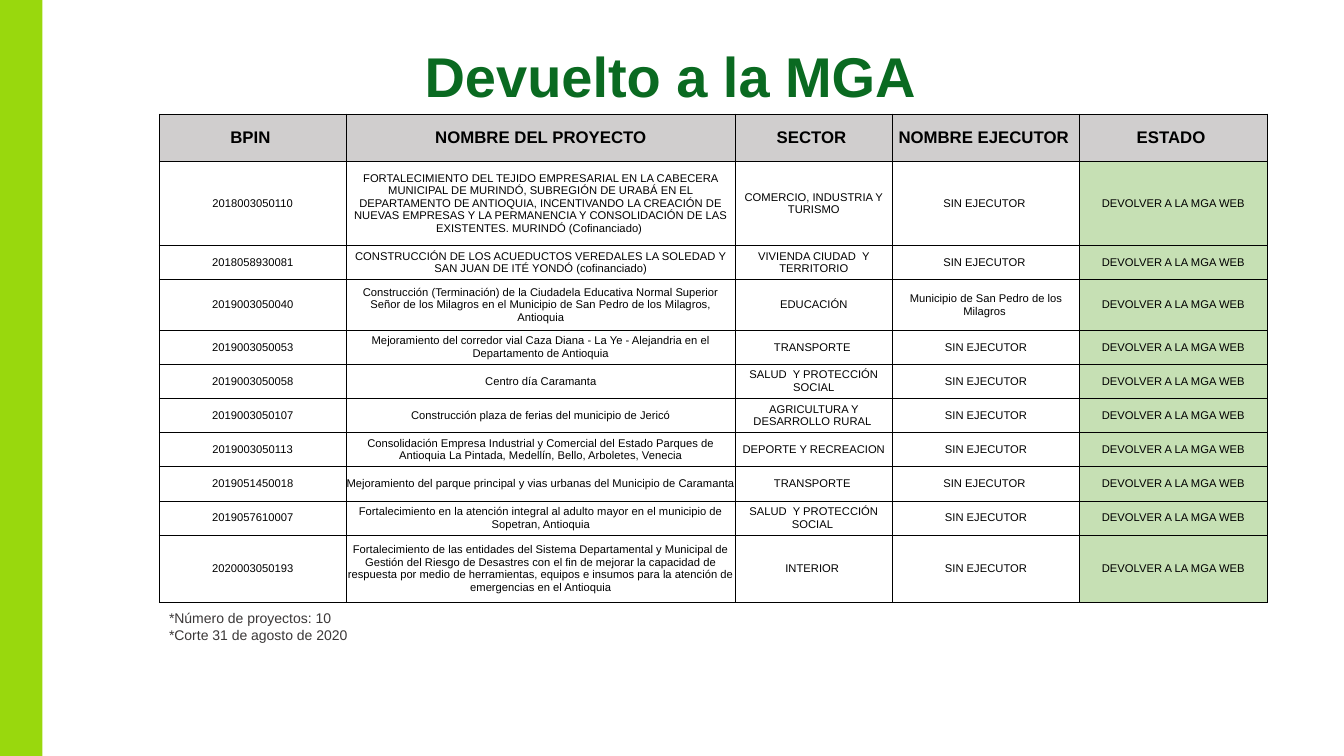
from lxml import etree
from pptx import Presentation
from pptx import util as u
from pptx.dml import color
from pptx.enum import shapes, text
from pptx.oxml import ns

GREEN = color.RGBColor(0x0A, 0x6A, 0x21)
LIME = color.RGBColor(0x99, 0xD8, 0x0D)
PALE_GREEN = color.RGBColor(0xC6, 0xE0, 0xB4)
GREY = color.RGBColor(0xD0, 0xCE, 0xCE)
DARK_GREY = color.RGBColor(0x3B, 0x38, 0x38)
BLACK = color.RGBColor(0, 0, 0)
WHITE = color.RGBColor(0xFF, 0xFF, 0xFF)

HEADINGS = ("BPIN ", "NOMBRE DEL PROYECTO", "SECTOR ", "NOMBRE EJECUTOR ", "ESTADO ")
STATE = "DEVOLVER A LA MGA WEB"
COLUMN_WIDTHS = (4.72, 9.8, 3.96, 4.72, 4.72)
HEADING_HEIGHT = 1.19
PROJECTS = (
    (2.13, "2018003050110",
     "FORTALECIMIENTO DEL TEJIDO EMPRESARIAL EN LA CABECERA MUNICIPAL DE MURINDÓ, "
     "SUBREGIÓN DE URABÁ EN EL DEPARTAMENTO DE ANTIOQUIA, INCENTIVANDO LA CREACIÓN DE "
     "NUEVAS EMPRESAS Y LA PERMANENCIA Y CONSOLIDACIÓN DE LAS EXISTENTES. "
     "MURINDÓ (Cofinanciado) ",
     "COMERCIO, INDUSTRIA Y TURISMO", "SIN EJECUTOR "),
    (0.86, "2018058930081",
     "CONSTRUCCIÓN DE LOS ACUEDUCTOS VEREDALES LA SOLEDAD Y SAN JUAN DE ITÉ YONDÓ "
     "(cofinanciado)",
     "VIVIENDA CIUDAD  Y TERRITORIO", "SIN EJECUTOR "),
    (1.27, "2019003050040",
     "Construcción (Terminación) de la Ciudadela Educativa Normal Superior Señor de los "
     "Milagros en el Municipio de San Pedro de los Milagros, Antioquia",
     "EDUCACIÓN", "Municipio de San Pedro de los Milagros "),
    (0.86, "2019003050053",
     "Mejoramiento del corredor vial Caza Diana - La Ye - Alejandria en el "
     "Departamento de Antioquia",
     "TRANSPORTE ", "SIN EJECUTOR"),
    (0.86, "2019003050058", "Centro día Caramanta",
     "SALUD  Y PROTECCIÓN SOCIAL", "SIN EJECUTOR"),
    (0.86, "2019003050107", "Construcción plaza de ferias del municipio de Jericó",
     "AGRICULTURA Y DESARROLLO RURAL ", "SIN EJECUTOR"),
    (0.86, "2019003050113",
     "Consolidación Empresa Industrial y Comercial del Estado Parques de Antioquia "
     "La Pintada, Medellín, Bello, Arboletes, Venecia",
     "DEPORTE Y RECREACION", "SIN EJECUTOR"),
    (0.86, "2019051450018",
     "Mejoramiento del parque principal y vias urbanas del Municipio de Caramanta ",
     "TRANSPORTE ", "SIN EJECUTOR "),
    (0.86, "2019057610007",
     "Fortalecimiento en la atención integral al adulto mayor en el municipio de "
     "Sopetran, Antioquia",
     "SALUD  Y PROTECCIÓN SOCIAL ", "SIN EJECUTOR"),
    (1.7, "2020003050193",
     "Fortalecimiento de las entidades del Sistema Departamental y Municipal de Gestión "
     "del Riesgo de Desastres con el fin de mejorar la capacidad de respuesta por medio de "
     "herramientas, equipos e insumos para la atención de emergencias en el Antioquia",
     "INTERIOR ", "SIN EJECUTOR"),
)


def set_attributes(target, values):
    """Set each named value on the target."""
    for name, value in values.items():
        setattr(target, name, value)


class SlideBuilder:
    """Holds the style and the current slide."""

    font_name = "Arial"
    border_width = u.Pt(0.5)

    def __init__(self, presentation):
        """Add a title-only slide to the presentation."""
        self.slide = presentation.slides.add_slide(presentation.slide_layouts[5])

    def fill_text(self, frame, lines, font_color, size, bold=False, align=text.PP_ALIGN.LEFT):
        """Fill a text frame with one formatted paragraph per line."""
        frame.text = "\n".join(lines)
        for paragraph in frame.paragraphs:
            paragraph.alignment = align
            set_attributes(paragraph.font, {
                "name": self.font_name, "size": u.Pt(size), "bold": bold})
            paragraph.font.color.rgb = font_color

    def title(self, wording, left, top, width, height):
        """Place and format the title placeholder."""
        shape = self.slide.shapes.title
        set_attributes(shape, {"left": u.Cm(left), "top": u.Cm(top),
                               "width": u.Cm(width), "height": u.Cm(height)})
        set_attributes(shape.text_frame, {
            "word_wrap": True, "vertical_anchor": text.MSO_ANCHOR.TOP,
            "auto_size": text.MSO_AUTO_SIZE.SHAPE_TO_FIT_TEXT})
        self.fill_text(shape.text_frame, [wording], GREEN, 40, True, text.PP_ALIGN.CENTER)

    def band(self, left, top, width, height, fill):
        """Add a plain filled rectangle."""
        shape = self.slide.shapes.add_shape(
            shapes.MSO_SHAPE.RECTANGLE, u.Cm(left), u.Cm(top), u.Cm(width), u.Cm(height))
        shape.shadow.inherit = False
        shape.fill.solid()
        shape.fill.fore_color.rgb = fill
        shape.line.fill.background()

    def note(self, lines, left, top, width, height):
        """Add a small text box."""
        shape = self.slide.shapes.add_textbox(
            u.Cm(left), u.Cm(top), u.Cm(width), u.Cm(height))
        set_attributes(shape.text_frame, {
            "word_wrap": False, "auto_size": text.MSO_AUTO_SIZE.SHAPE_TO_FIT_TEXT})
        self.fill_text(shape.text_frame, lines, DARK_GREY, 10)

    def cell(self, cell, wording, fill, size, bold):
        """Fill, outline and label one table cell."""
        set_attributes(cell, {
            "margin_left": 0, "margin_right": 0, "margin_top": 0, "margin_bottom": 0,
            "vertical_anchor": text.MSO_ANCHOR.MIDDLE})
        self.fill_text(cell.text_frame, [wording], BLACK, size, bold, text.PP_ALIGN.CENTER)
        properties = cell._tc.get_or_add_tcPr()
        for side in ("a:lnL", "a:lnR", "a:lnT", "a:lnB"):
            line = etree.SubElement(properties, ns.qn(side), w=str(self.border_width))
            solid = etree.SubElement(line, ns.qn("a:solidFill"))
            etree.SubElement(solid, ns.qn("a:srgbClr"), val=str(BLACK))
        cell.fill.solid()
        cell.fill.fore_color.rgb = fill

    def project_table(self, left, top):
        """Add the table of projects."""
        heights = [HEADING_HEIGHT] + [project[0] for project in PROJECTS]
        rows = [HEADINGS] + [project[1:] + (STATE,) for project in PROJECTS]
        table = self.slide.shapes.add_table(
            len(rows), len(HEADINGS), u.Cm(left), u.Cm(top),
            u.Cm(sum(COLUMN_WIDTHS)), u.Cm(sum(heights))).table
        table.horz_banding = False
        for column, width in zip(table.columns, COLUMN_WIDTHS):
            column.width = u.Cm(width)
        for row_index, (height, row) in enumerate(zip(heights, rows)):
            table.rows[row_index].height = u.Cm(height)
            heading = row_index == 0
            for column_index, wording in enumerate(row):
                fill = GREY if heading else PALE_GREEN if wording == STATE else WHITE
                self.cell(table.cell(row_index, column_index), wording, fill,
                          12 if heading else 8, heading)


def main():
    """Build and save the slide."""
    presentation = Presentation()
    set_attributes(presentation, {"slide_width": u.Cm(33.87), "slide_height": u.Cm(19.05)})
    builder = SlideBuilder(presentation)
    builder.title("Devuelto a la MGA", 3.2, 0.91, 27.38, 1.96)
    builder.band(0, 0, 1.07, 19.05, LIME)
    builder.note(["*Número de proyectos: 10", "*Corte 31 de agosto de 2020"],
                 4.01, 15.24, 5.38, 1.12)
    builder.project_table(4.01, 2.87)
    presentation.save("out.pptx")


if __name__ == "__main__":
    main()
